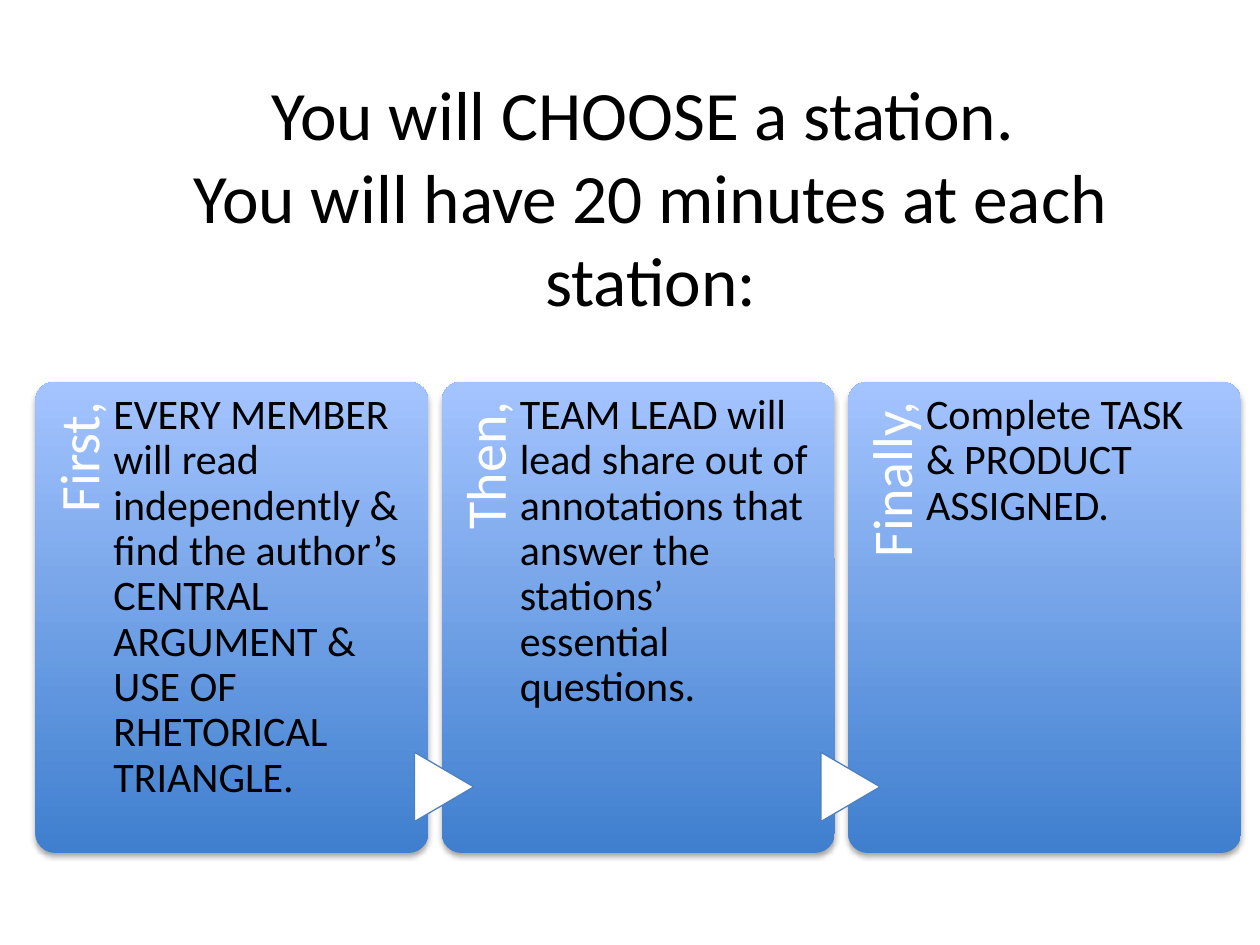
from pptx import Presentation
from pptx.dml.color import RGBColor
from pptx.enum.shapes import MSO_SHAPE
from pptx.enum.text import MSO_ANCHOR, MSO_AUTO_SIZE, PP_ALIGN
from pptx.oxml import parse_xml
from pptx.util import Inches, Pt

BLACK = RGBColor(0x00, 0x00, 0x00)
WHITE = RGBColor(0xFF, 0xFF, 0xFF)
DEEP_BLUE = RGBColor(0x3F, 0x7F, 0xCE)
LIGHT_BLUE = RGBColor(0xA4, 0xC4, 0xFF)
LINE_BLUE = RGBColor(0x4F, 0x81, 0xBD)

SHADOW = (
    '<a:effectLst xmlns:a="http://schemas.openxmlformats.org/drawingml/2006/main">'
    '<a:outerShdw blurRad="39370" dist="22860" dir="5400000" rotWithShape="0">'
    '<a:srgbClr val="000000"><a:alpha val="35000"/></a:srgbClr>'
    "</a:outerShdw></a:effectLst>"
)

COLUMNS, ROWS = 100, 75
CARD_LEFT, CARD_TOP, CARD_PITCH = 2.8, 30.3, 32.25
CARD_WIDTH, CARD_HEIGHT = 31.2, 37.4

STEPS = [
    ("First,", "EVERY MEMBER will read independently & find the author’s "
               "CENTRAL ARGUMENT & USE OF RHETORICAL TRIANGLE."),
    ("Then,", "TEAM LEAD will lead share out of annotations that answer "
              "the stations’ essential questions."),
    ("Finally,", "Complete TASK & PRODUCT ASSIGNED."),
]


class StationSlide:
    font_name = "Calibri"

    def __init__(self, presentation):
        self.column = presentation.slide_width / COLUMNS
        self.row = presentation.slide_height / ROWS
        self.slide = presentation.slides.add_slide(presentation.slide_layouts[5])
        self.shapes = self.slide.shapes

    def box(self, left, top, width, height):
        return (round(left * self.column), round(top * self.row),
                round(width * self.column), round(height * self.row))

    def apply(self, target, values):
        for name, value in values.items():
            setattr(target, name, value)

    def set_text(self, frame, text, size, color, frame_format, paragraph_format):
        self.apply(frame, {"word_wrap": True, "auto_size": MSO_AUTO_SIZE.NONE,
                           **frame_format})
        frame.text = text
        for paragraph in frame.paragraphs:
            self.apply(paragraph, paragraph_format)
            for run in paragraph.runs:
                self.apply(run.font, {"name": self.font_name, "size": Pt(size)})
                run.font.color.rgb = color

    def title(self, text, left, top, width, height):
        shape = self.shapes.title
        position = self.box(left, top, width, height)
        self.apply(shape, dict(zip(("left", "top", "width", "height"), position)))
        self.set_text(shape.text_frame, text, 39.6, BLACK,
                      {"vertical_anchor": MSO_ANCHOR.MIDDLE},
                      {"alignment": PP_ALIGN.CENTER})

    def card(self, left, top):
        shape = self.shapes.add_shape(
            MSO_SHAPE.ROUNDED_RECTANGLE,
            *self.box(left, top, CARD_WIDTH, CARD_HEIGHT))
        shape.adjustments[0] = 0.05
        shape.fill.gradient()
        shape.fill.gradient_angle = 90
        for stop, color in zip(shape.fill.gradient_stops, (DEEP_BLUE, LIGHT_BLUE)):
            stop.color.rgb = color
        shape.line.fill.background()
        shape.element.spPr.append(parse_xml(SHADOW))

    def arrow(self, left, top):
        shape = self.shapes.add_shape(
            MSO_SHAPE.FLOWCHART_EXTRACT, *self.box(left, top, 5.5, 4.7))
        shape.rotation = 90
        shape.shadow.inherit = False
        shape.fill.solid()
        shape.fill.fore_color.rgb = WHITE
        shape.line.color.rgb = LINE_BLUE
        shape.line.width = Pt(0.75)

    def label(self, text, left, top):
        shape = self.shapes.add_textbox(*self.box(left, top, 30.7, 6.2))
        shape.rotation = 270
        self.set_text(shape.text_frame, text, 32, WHITE,
                      {"margin_left": 0, "margin_top": Inches(0.12),
                       "margin_right": Inches(0.16), "margin_bottom": 0},
                      {"alignment": PP_ALIGN.RIGHT, "line_spacing": 0.9})

    def description(self, text, left, top):
        shape = self.shapes.add_textbox(*self.box(left, top, 23.2, CARD_HEIGHT))
        self.set_text(shape.text_frame, text, 24, BLACK,
                      {"margin_left": 0, "margin_top": Inches(0.09),
                       "margin_right": 0, "margin_bottom": 0},
                      {"alignment": PP_ALIGN.LEFT, "line_spacing": 0.9})


def main():
    presentation = Presentation()
    presentation.slide_width = Inches(10)
    presentation.slide_height = Inches(7.5)

    station = StationSlide(presentation)
    station.title("You will CHOOSE a station. \v"
                  "You will have 20 minutes at each station:",
                  11.9, 10.3, 79.5, 10.5)
    for index, (label, description) in enumerate(STEPS):
        left = CARD_LEFT + index * CARD_PITCH
        station.card(left, CARD_TOP)
        station.label(label, left - 12.2, CARD_TOP + 12.2)
        if index:
            station.arrow(left - 2.55, CARD_TOP + 29.8)
        station.description(description, left + 6.2, CARD_TOP)

    presentation.save("out.pptx")


if __name__ == "__main__":
    main()
